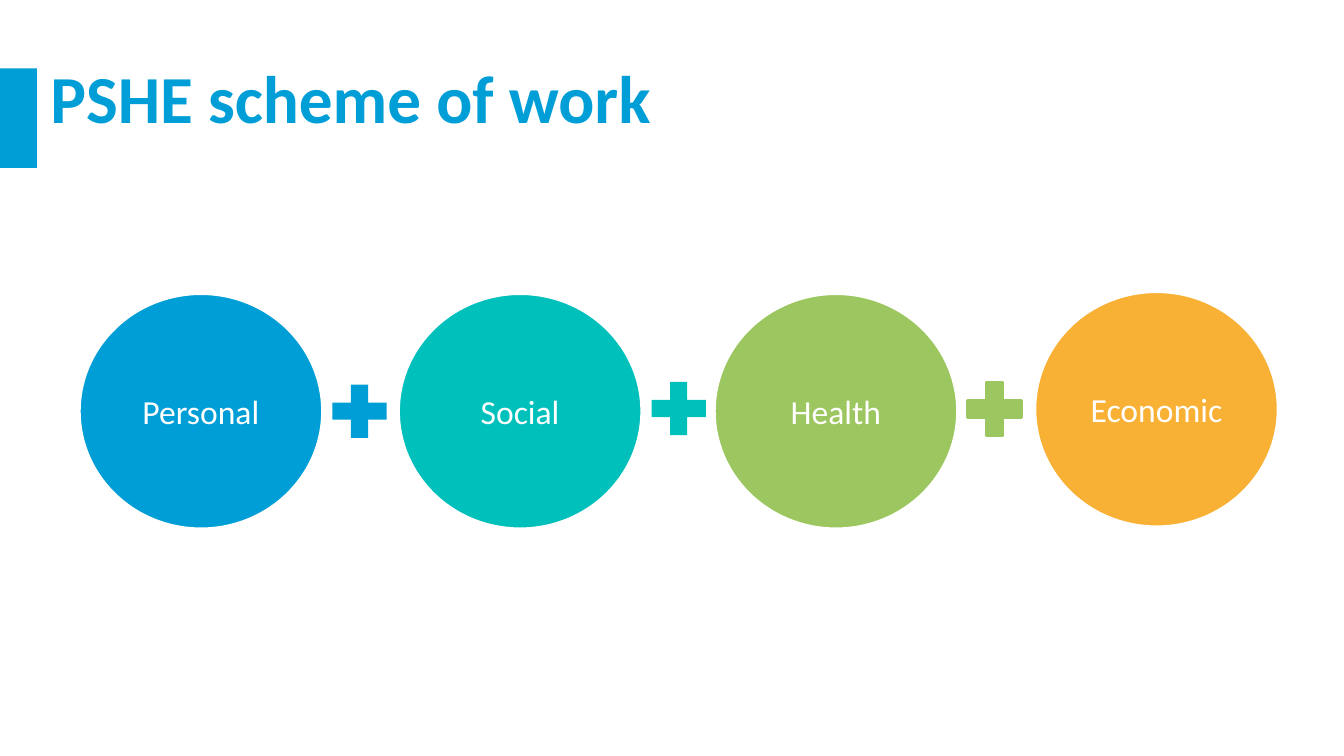
from pptx import Presentation
from pptx.dml.color import RGBColor
from pptx.enum.shapes import MSO_SHAPE
from pptx.enum.text import MSO_ANCHOR, MSO_AUTO_SIZE, PP_ALIGN
from pptx.util import Pt

PX = 4572  # 200 px to the inch
COLOURS = {
    "blue": "009ED6",
    "teal": "00C0BC",
    "green": "9CC65F",
    "orange": "F9B135",
    "white": "FFFFFF",
}
# label, colour, left and top of the circle, top of the plus after it, plus outline
STRANDS = [
    ("Personal", "blue", 0, 3, 124, False),
    ("Social", "teal", 475, 3, 120, False),
    ("Health", "green", 945, 3, 121, True),
    ("Economic", "orange", 1422, 0, None, False),
]
CIRCLE_WIDTH, CIRCLE_HEIGHT = 362, 350
PLUS_WIDTH, PLUS_HEIGHT = 110, 108


def colour(name):
    return RGBColor.from_string(COLOURS[name])


def add_solid(page, kind, box, fill, line=None):
    shape = page.shapes.add_shape(kind, *(value * PX for value in box))
    shape.shadow.inherit = False
    shape.fill.solid()
    shape.fill.fore_color.rgb = colour(fill)
    if line:
        shape.line.color.rgb = colour(line)
        shape.line.width = Pt(1.5)
    else:
        shape.line.fill.background()
    return shape


def write(shape, text, size, ink, align, anchor, bold=False):
    frame = shape.text_frame
    frame.word_wrap = True
    frame.auto_size = MSO_AUTO_SIZE.NONE
    frame.vertical_anchor = anchor
    para = frame.paragraphs[0]
    para.alignment = align
    span = para.add_run()
    span.text = text
    span.font.name = "Calibri"
    span.font.size = Pt(size)
    span.font.bold = bold
    span.font.color.rgb = colour(ink)


def add_heading(page, left, top, width, height):
    """Place the title with its accent block on the left."""
    accent_width = 55
    title = page.shapes.title
    title.left, title.top = (left + accent_width) * PX, top * PX
    title.width, title.height = (width - accent_width) * PX, height * PX
    write(title, "PSHE scheme of work", 36, "blue",
          PP_ALIGN.LEFT, MSO_ANCHOR.TOP, bold=True)
    add_solid(page, MSO_SHAPE.RECTANGLE, (left, top + 28, accent_width, 148), "blue")


def add_strands(page, left, top):
    """Place the row of circles joined by plus signs."""
    for label, fill, offset, drop, plus_drop, outlined in STRANDS:
        x = left + offset
        circle = add_solid(page, MSO_SHAPE.OVAL,
                           (x, top + drop, CIRCLE_WIDTH, CIRCLE_HEIGHT), fill, "white")
        write(circle, label, 18, "white", PP_ALIGN.CENTER, MSO_ANCHOR.MIDDLE)
        if plus_drop is not None:
            add_solid(page, MSO_SHAPE.MATH_PLUS,
                      (x + CIRCLE_WIDTH, top + plus_drop, PLUS_WIDTH, PLUS_HEIGHT),
                      fill, fill if outlined else None)


def main():
    deck = Presentation()
    deck.slide_width, deck.slide_height = 2000 * PX, 1125 * PX
    page = deck.slides.add_slide(deck.slide_layouts[5])
    add_heading(page, 0, 74, 1693, 142)
    add_strands(page, 118, 434)
    deck.save("out.pptx")


if __name__ == "__main__":
    main()
